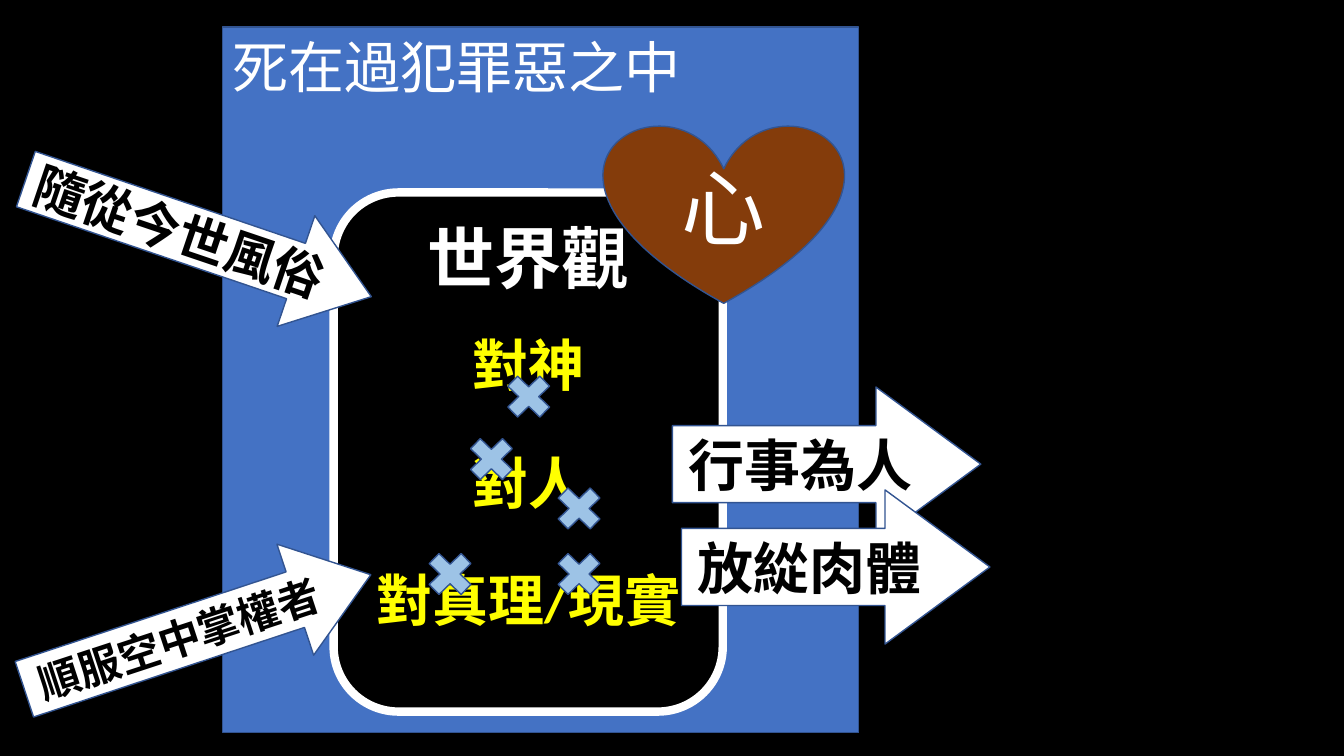
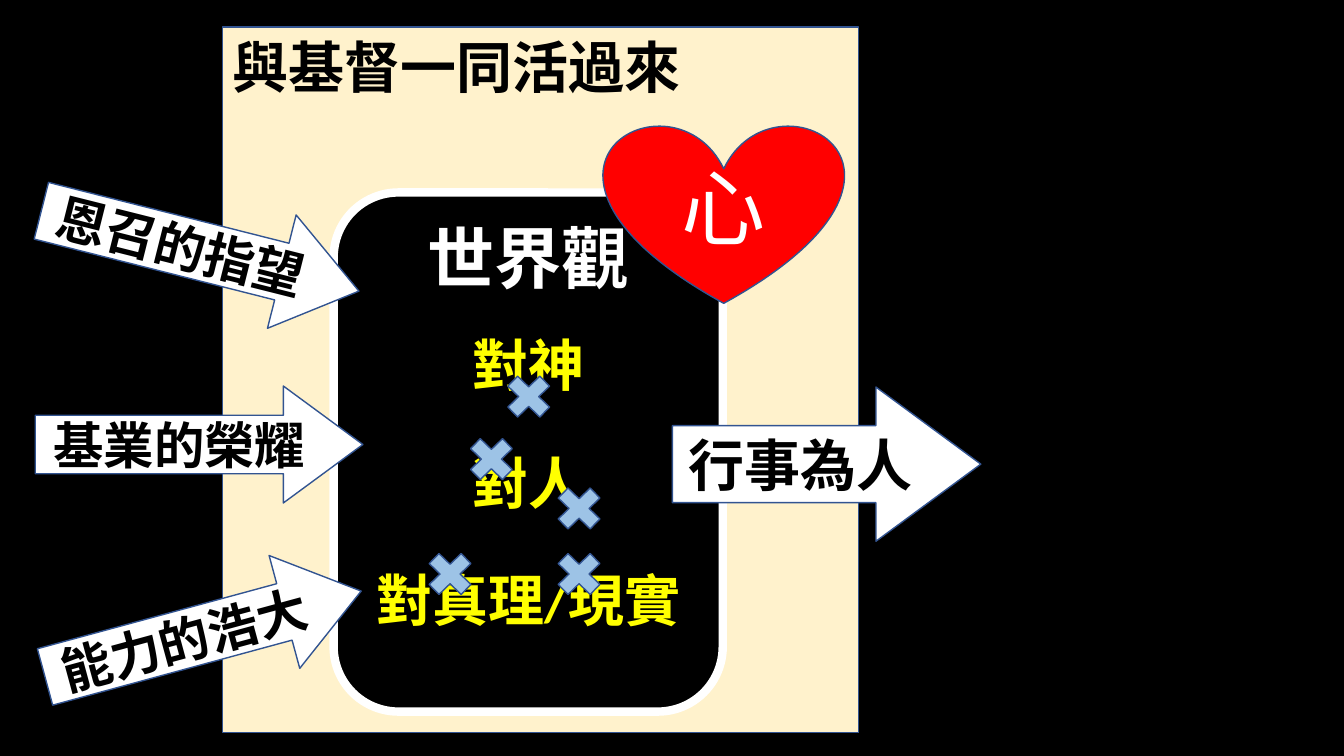
from dataclasses import dataclass

from pptx import Presentation
from pptx.dml.color import RGBColor
from pptx.enum.shapes import MSO_SHAPE as Preset
from pptx.enum.text import MSO_ANCHOR as Anchor, PP_ALIGN as Align
from pptx.util import Inches, Pt


@dataclass(frozen=True)
class Theme:
    font: str = "Calibri"
    black: str = "000000"
    white: str = "FFFFFF"
    yellow: str = "FFFF00"
    outline: str = "325491"
    cross: str = "9DC3E6"
    thin: float = 1
    thick: float = 6
    body: int = 40
    worldview: int = 48
    heart: int = 60
    influence: int = 36
    long_influence: int = 30


@dataclass(frozen=True)
class Line:
    text: str
    size: int
    color: str
    bold: bool = True
    before: int = 0


THEME = Theme()

COLUMNS, ROWS = 133.33, 75
CELL = Inches(13.33) / COLUMNS

PERSON = (22.1, 2.7, 63.1, 70)
WORLDVIEW = (33.1, 19.1, 38.6, 51.5)
HEART = (59.9, 12.3, 23.8, 17.8)
CROSS_SIZE = (6.1, 5.9)
CROSSES = [(49.4, 36.4), (45.7, 42.6), (41.6, 54), (54.4, 54), (54.4, 47.5)]
INFLUENCE_HEIGHT = 11.6
OUTCOME_SIZE = (30.6, 15.3)
OUTCOME_START = (66.7, 38.4)
OUTCOME_STEP = (0.9, 10.2)

WORLDVIEW_LINES = [
    Line("世界觀", THEME.worldview, THEME.white),
    Line("對神", THEME.body, THEME.yellow, before=24),
    Line("對人", THEME.body, THEME.yellow, before=36),
    Line("對真理/現實", THEME.body, THEME.yellow, before=36),
]

STATES = [
    {
        "title": Line("死在過犯罪惡之中", THEME.body, THEME.white, bold=False),
        "person_color": "4472C4",
        "heart_color": "843C0B",
        "influence_width": 36.2,
        "influences": [
            ("隨從今世風俗", 1.6, 17.8, 18.8, THEME.influence),
            ("順服空中掌權者", 1.5, 56.9, 341.7, THEME.long_influence),
        ],
        "outcomes": ["行事為人", "放緃肉體"],
    },
    {
        "title": Line("與基督一同活過來", THEME.body, THEME.black),
        "person_color": "FFF2CC",
        "heart_color": "FF0000",
        "influence_width": 32.5,
        "influences": [
            ("恩召的指望", 3.6, 19.1, 14.2, THEME.influence),
            ("基業的榮耀", 3.5, 38.3, 0, THEME.influence),
            ("能力的浩大", 3.9, 57.1, 344.8, THEME.influence),
        ],
        "outcomes": ["行事為人"],
    },
]


def rgb(color):
    return RGBColor.from_string(color)


def write(shape, lines, align, anchor):
    frame = shape.text_frame
    frame.word_wrap = True
    frame.vertical_anchor = anchor
    for index, line in enumerate(lines):
        paragraph = frame.add_paragraph() if index else frame.paragraphs[0]
        paragraph.alignment = align
        paragraph.space_before = Pt(line.before)
        run = paragraph.add_run()
        run.text = line.text
        run.font.name = THEME.font
        run.font.size = Pt(line.size)
        run.font.bold = line.bold
        run.font.color.rgb = rgb(line.color)


def draw(slide, preset, area, fill, lines=(), align=Align.CENTER,
         anchor=Anchor.MIDDLE, outline=THEME.outline, weight=THEME.thin):
    shape = slide.shapes.add_shape(preset, *(round(part * CELL) for part in area))
    shape.shadow.inherit = False
    shape.fill.solid()
    shape.fill.fore_color.rgb = rgb(fill)
    shape.line.color.rgb = rgb(outline)
    shape.line.width = Pt(weight)
    write(shape, lines, align, anchor)
    return shape


def draw_arrow(slide, area, text, size, angle=0):
    arrow = draw(slide, Preset.RIGHT_ARROW, area, THEME.white,
                 [Line(text, size, THEME.black)])
    arrow.adjustments[1] = 0.68
    arrow.rotation = angle


def build_state(deck, state):
    slide = deck.slides.add_slide(deck.slide_layouts[6])
    slide.background.fill.solid()
    slide.background.fill.fore_color.rgb = rgb(THEME.black)

    draw(slide, Preset.RECTANGLE, PERSON, state["person_color"],
         [state["title"]], Align.LEFT, Anchor.TOP)
    draw(slide, Preset.ROUNDED_RECTANGLE, WORLDVIEW, THEME.black,
         WORLDVIEW_LINES, anchor=Anchor.TOP,
         outline=THEME.white, weight=THEME.thick)
    for corner in CROSSES:
        draw(slide, Preset.MATH_MULTIPLY, corner + CROSS_SIZE, THEME.cross)
    draw(slide, Preset.HEART, HEART, state["heart_color"],
         [Line("心", THEME.heart, THEME.white, bold=False)])

    for text, left, top, angle, size in state["influences"]:
        area = (left, top, state["influence_width"], INFLUENCE_HEIGHT)
        draw_arrow(slide, area, text, size, angle)
    for index, text in enumerate(state["outcomes"]):
        corner = tuple(start + index * step
                       for start, step in zip(OUTCOME_START, OUTCOME_STEP))
        draw_arrow(slide, corner + OUTCOME_SIZE, text, THEME.body)


def main():
    deck = Presentation()
    deck.slide_width = round(COLUMNS * CELL)
    deck.slide_height = round(ROWS * CELL)
    for state in STATES:
        build_state(deck, state)
    deck.save("out.pptx")


if __name__ == "__main__":
    main()
